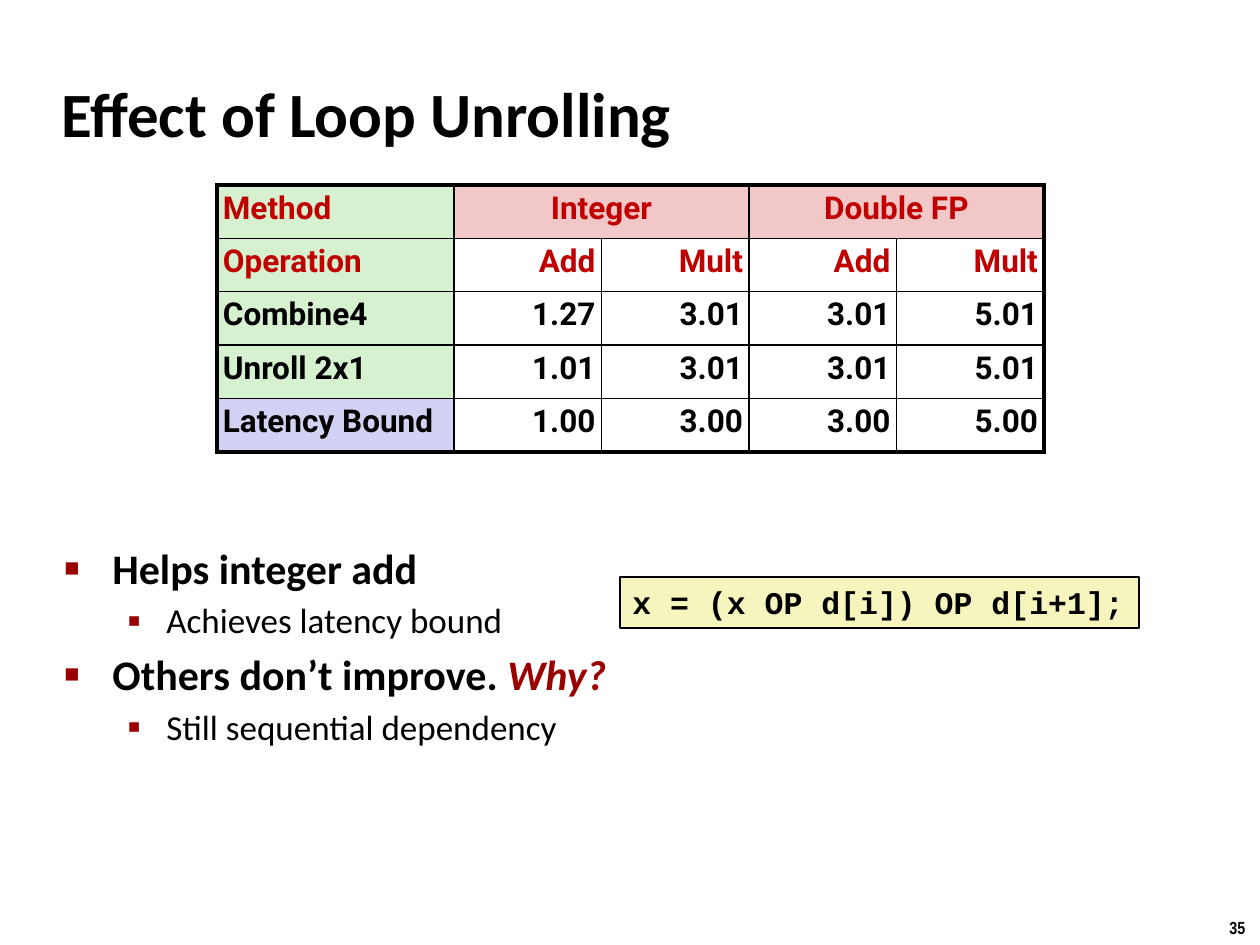
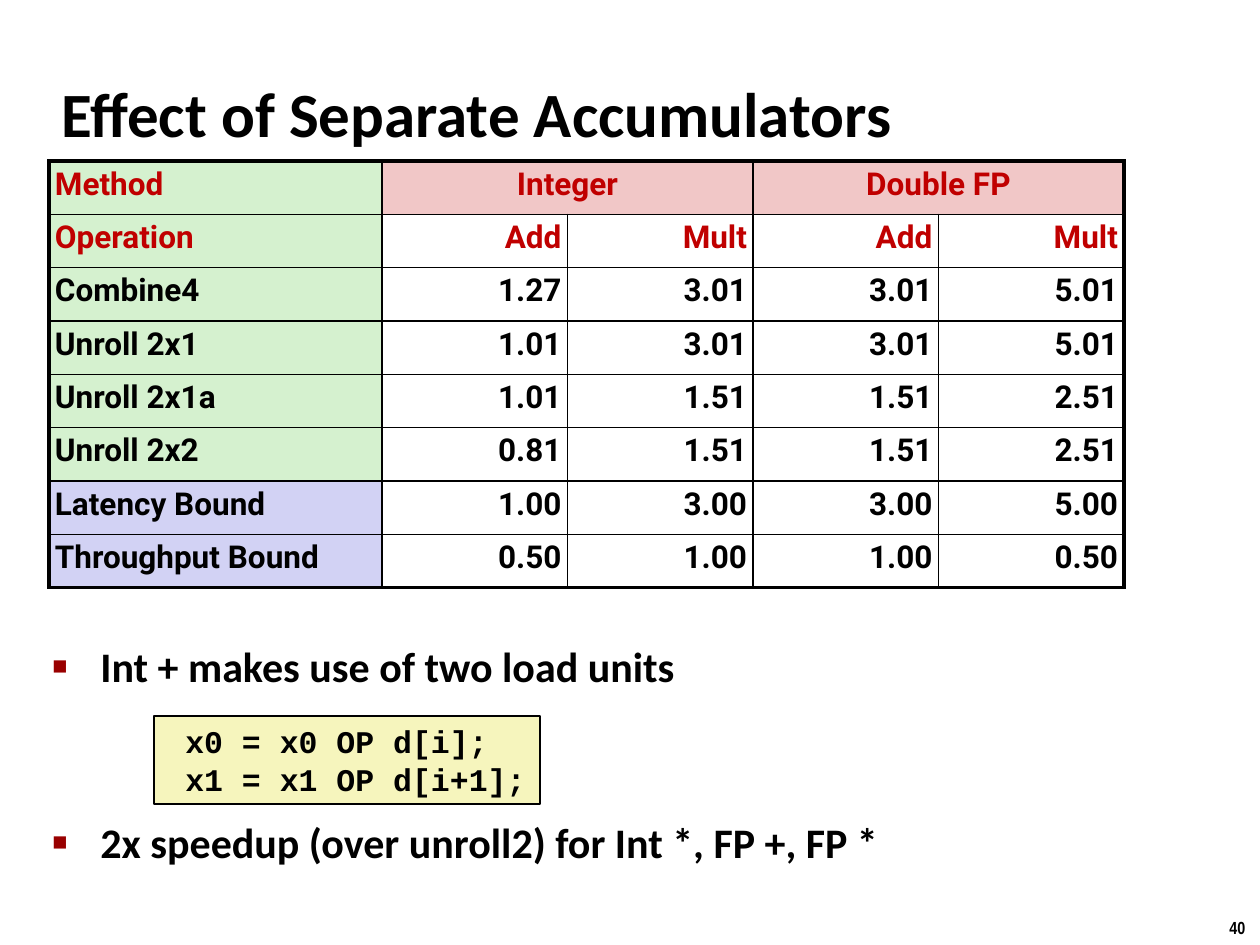
from lxml.etree import SubElement
from pptx import Presentation
from pptx.dml.color import RGBColor
from pptx.enum.shapes import MSO_SHAPE as Shape
from pptx.enum.text import MSO_ANCHOR as Anchor, MSO_AUTO_SIZE as Auto, PP_ALIGN as Align
from pptx.oxml.ns import qn
from pptx.util import Pt

PX = 914400 / 126
BLACK, RED, DARK = "000000", "C00000", "990000"
GREEN, PINK, LILAC, CREAM = "D5F1CF", "F1C7C7", "D2D2F4", "F6F5BD"
THIN, THICK = 1, 2.25
WHY = {"color": DARK, "italic": True}

HEAD = [
    ("Method", "Integer", "", "Double FP", ""),
    ("Operation", "Add", "Mult", "Add", "Mult"),
    ("Combine4", "1.27", "3.01", "3.01", "5.01"),
    ("Unroll 2x1", "1.01", "3.01", "3.01", "5.01"),
]
LATENCY = ("Latency Bound", "1.00", "3.00", "3.00", "5.00")

# Each bullet: level, points of space before it, runs as (text, style)
SLIDES = [
    {
        "title": "Effect of Loop Unrolling",
        "number": "35",
        "rows": HEAD + [LATENCY],
        "grid": (217, 185, 827, 267),
        "label": 237,
        "body": (52, 536, 1145, 368),
        "bullets": [
            (0, 4.4, [("Helps integer add", {})]),
            (1, 3.6, [("Achieves latency bound", {})]),
            (0, 4.4, [("Others don’t improve. ", {}), ("Why?", WHY)]),
            (1, 3.6, [("Still sequential dependency", {})]),
        ],
        "code": ["x = (x OP d[i]) OP d[i+1];"],
        "box": (620, 577, 519, 51),
    },
    {
        "title": "Effect of Separate Accumulators",
        "number": "40",
        "rows": HEAD + [
            ("Unroll 2x1a", "1.01", "1.51", "1.51", "2.51"),
            ("Unroll 2x2", "0.81", "1.51", "1.51", "2.51"),
            LATENCY,
            ("Throughput Bound", "0.50", "1.00", "1.00", "0.50"),
        ],
        "grid": (49, 161, 1075, 427),
        "label": 333,
        "body": (40, 634, 1145, 258),
        "bullets": [
            (0, 4.4, [("Int + makes use of two load units", {})]),
            (0, 72, [("2x speedup (over unroll2) for Int *, FP +, FP *", {})]),
        ],
        "code": [" x0 = x0 OP d[i];", " x1 = x1 OP d[i+1];"],
        "box": (154, 716, 386, 88),
    },
]

# Per level: size, bold, bullet sign, bullet size in percent, indent, hang
LEVELS = [(24, True, "■", 60, 48, 48), (20, False, "▪", 110, 102, 39)]


def emu(*sizes):
    return [round(s * PX) for s in sizes]


def rgb(color):
    return RGBColor.from_string(color)


def put(para, text, font, size, color=BLACK, bold=True, italic=False):
    run = para.add_run()
    run.text = text
    face = run.font
    face.name, face.size = font, Pt(size)
    face.bold, face.italic = bold, italic
    face.color.rgb = rgb(color)


def frame(slide, at, wrap=True):
    text = slide.shapes.add_textbox(*emu(*at)).text_frame
    text.word_wrap = wrap
    return text


def paras(text, items):
    """Yield a paragraph with each item, starting with the one already there."""
    for i, item in enumerate(items):
        yield (text.add_paragraph() if i else text.paragraphs[0]), item


def mark(para, level):
    """Give a paragraph its bullet and hanging indent."""
    _, _, sign, size, indent, hang = LEVELS[level]
    props = para._p.get_or_add_pPr()
    left, back = emu(indent, -hang)
    props.set("marL", str(left))
    props.set("indent", str(back))
    tint = SubElement(props, qn("a:buClr"))
    SubElement(tint, qn("a:srgbClr"), val=DARK)
    SubElement(props, qn("a:buSzPct"), val=str(size * 1000))
    SubElement(props, qn("a:buFont"), typeface="Arial")
    SubElement(props, qn("a:buChar"), char=sign)


def bullets(slide, data):
    text = frame(slide, data["body"])
    for para, (level, gap, runs) in paras(text, data["bullets"]):
        para.space_before = Pt(gap)
        mark(para, level)
        size, bold = LEVELS[level][:2]
        for words, style in runs:
            put(para, words, "Calibri", size, bold=bold, **style)


def code(slide, data):
    box = slide.shapes.add_shape(Shape.RECTANGLE, *emu(*data["box"]))
    box.shadow.inherit = False
    box.fill.solid()
    box.fill.fore_color.rgb = rgb(CREAM)
    box.line.color.rgb = rgb(BLACK)
    box.line.width = Pt(THIN)
    text = box.text_frame
    text.word_wrap = False
    text.auto_size = Auto.SHAPE_TO_FIT_TEXT
    text.vertical_anchor = Anchor.TOP
    for para, line in paras(text, data["code"]):
        para.alignment = Align.LEFT
        put(para, line, "Courier New", 18)


def edge(cell, **widths):
    props = cell._tc.get_or_add_tcPr()
    for side, width in widths.items():
        line = SubElement(props, qn("a:ln" + side), w=str(Pt(width)))
        fill = SubElement(line, qn("a:solidFill"))
        SubElement(fill, qn("a:srgbClr"), val=BLACK)


def tint(label, row, col):
    if col == 0:
        return LILAC if label.endswith("Bound") else GREEN
    return PINK if row == 0 else None


def table(slide, data):
    rows = data["rows"]
    tall, wide = len(rows), len(rows[0])
    left, top, width, height = data["grid"]
    grid = slide.shapes.add_table(tall, wide, *emu(left, top, width, height)).table
    grid.first_row = grid.horz_banding = False
    first = data["label"]
    rest = (width - first) / (wide - 1)
    for i, col in enumerate(grid.columns):
        col.width, = emu(rest if i else first)
    for i in range(1, wide, 2):
        grid.cell(0, i).merge(grid.cell(0, i + 1))
    for r, row in enumerate(rows):
        for c, words in enumerate(row):
            cell = grid.cell(r, c)
            if cell.is_spanned:
                continue
            last = c + cell.span_width == wide
            edge(cell, L=THIN if c else THICK, R=THICK if last else THIN,
                 T=THIN if r else THICK, B=THICK if r == tall - 1 else THIN)
            color = tint(row[0], r, c)
            if color:
                cell.fill.solid()
                cell.fill.fore_color.rgb = rgb(color)
            else:
                cell.fill.background()
            inset, = emu(6)
            cell.margin_left = cell.margin_right = inset
            cell.margin_top = cell.margin_bottom = inset
            para = cell.text_frame.paragraphs[0]
            para.line_spacing = 0.95
            para.alignment = (Align.LEFT if c == 0 else
                              Align.CENTER if r == 0 else Align.RIGHT)
            put(para, words, "Roboto", 18, RED if r < 2 else BLACK)


def main():
    deck = Presentation()
    deck.slide_width, deck.slide_height = emu(1260, 945)
    for data in SLIDES:
        slide = deck.slides.add_slide(deck.slide_layouts[6])
        number = frame(slide, (1217, 911, 43, 34), wrap=False)
        put(number.paragraphs[0], data["number"], "Arial Narrow", 10)
        title = frame(slide, (49, 60, 1046, 105))
        title.vertical_anchor = Anchor.MIDDLE
        put(title.paragraphs[0], data["title"], "Calibri", 36)
        bullets(slide, data)
        code(slide, data)
        table(slide, data)
    deck.save("out.pptx")


if __name__ == "__main__":
    main()
